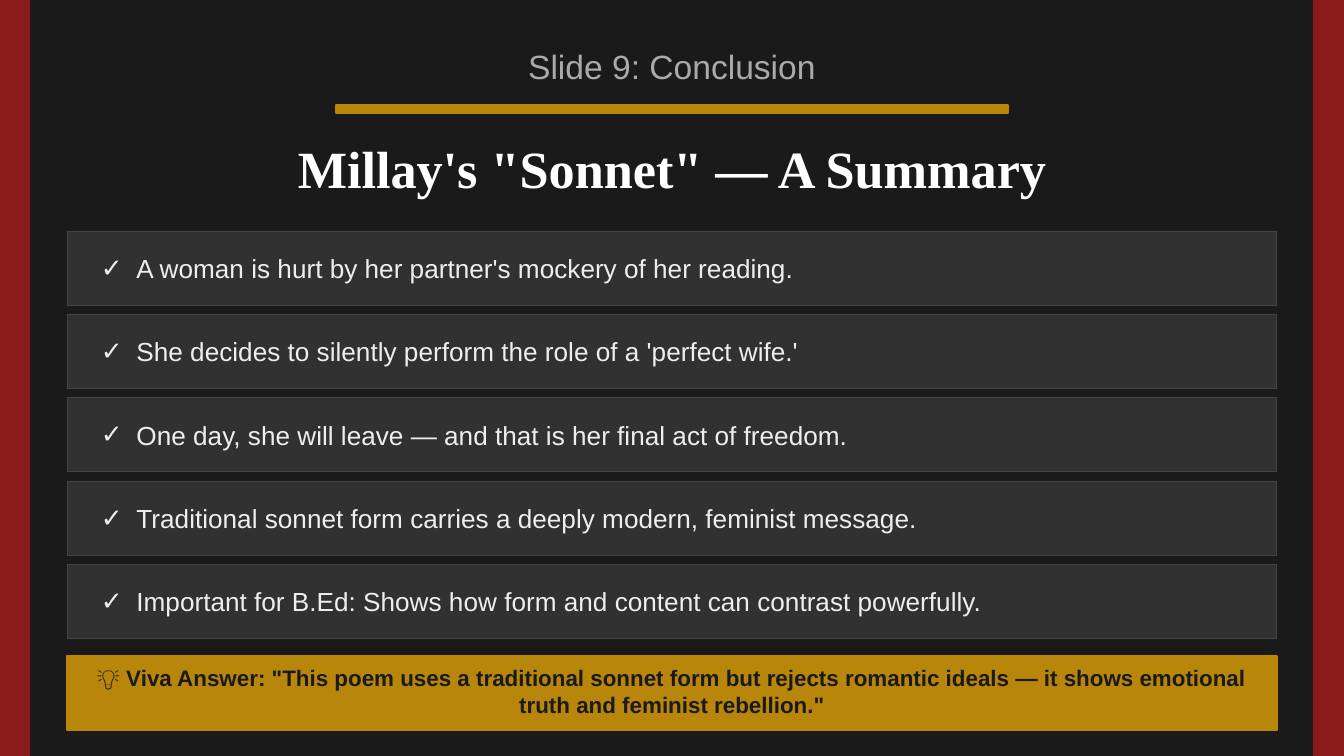
"""Build the concluding summary slide on Millay's sonnet."""
from lxml import etree
from pptx import Presentation
from pptx import util as u
from pptx.dml.color import RGBColor
from pptx.enum import shapes, text
from pptx.oxml.ns import qn

PX = 4572
WIDTH, HEIGHT = 2000, 1125
SIDE = 44
MARGIN, CONTENT = 100, 1800
ROW_TOP, ROW_HEIGHT, ROW_PITCH = 344, 110, 124
LINE_POINTS = 16
PX_POINTS = 0.36

COLORS = {
    "night": "1A1A1A",
    "red": "8B1A1A",
    "gold": "B7860B",
    "white": "FFFFFF",
    "edge": "444444",
    "label": "AAAAAA",
    "item": "EEEEEE",
}

FORMATS = {
    "label": {"name": "Arial", "size": u.Pt(18), "bold": False, "color": "label"},
    "title": {"name": "Times New Roman", "size": u.Pt(28), "bold": True, "color": "white"},
    "item": {"name": "Arial", "size": u.Pt(14), "bold": False, "color": "item"},
    "answer": {"name": "Arial", "size": u.Pt(12), "bold": True, "color": "night"},
}

POINTS = [
    "A woman is hurt by her partner's mockery of her reading.",
    "She decides to silently perform the role of a 'perfect wife.'",
    "One day, she will leave — and that is her final act of freedom.",
    "Traditional sonnet form carries a deeply modern, feminist message.",
    "Important for B.Ed: Shows how form and content can contrast powerfully.",
]
ANSWER = (
    '💡 Viva Answer: "This poem uses a traditional sonnet form but rejects '
    'romantic ideals — it shows emotional truth and feminist rebellion."'
)


def px(*lengths):
    """Turn pixel lengths into EMU."""
    return [u.Emu(length * PX) for length in lengths]


def rgb(name):
    """Look up a named colour."""
    return RGBColor.from_string(COLORS[name])


def add_bar(page, area, fill, line, points=1, opacity=100):
    """Add a flat rectangle with an outline."""
    bar = page.shapes.add_shape(shapes.MSO_SHAPE.RECTANGLE, *px(*area))
    bar.shadow.inherit = False
    bar.fill.solid()
    bar.fill.fore_color.rgb = rgb(fill)
    bar.line.color.rgb = rgb(line)
    bar.line.width = u.Pt(points)
    if opacity < 100:
        color = bar.fill._xPr.find(qn("a:solidFill"))[0]
        etree.SubElement(color, qn("a:alpha"), val=str(opacity * 1000))


def add_span(para, words, style):
    """Add a run of text in a named format."""
    span = para.add_run()
    span.text = words
    for key, value in FORMATS[style].items():
        if key == "color":
            span.font.color.rgb = rgb(value)
        else:
            setattr(span.font, key, value)


def set_frame(box, area):
    """Place a text holder and centre its text vertically."""
    box.left, box.top, box.width, box.height = px(*area)
    settings = {
        "word_wrap": True,
        "auto_size": text.MSO_AUTO_SIZE.NONE,
        "vertical_anchor": text.MSO_ANCHOR.MIDDLE,
    }
    for key, value in settings.items():
        setattr(box.text_frame, key, value)


def write_line(box, area, words, style):
    """Fill a text holder with one centred paragraph."""
    set_frame(box, area)
    para = box.text_frame.paragraphs[0]
    para.alignment = text.PP_ALIGN.CENTER
    add_span(para, words, style)


def add_text(page, area, words, style):
    """Add a text box with one centred paragraph."""
    write_line(page.shapes.add_textbox(*px(*area)), area, words, style)


def add_check(para):
    """Give a paragraph a hanging check mark."""
    indent = 53 * PX
    properties = para._p.get_or_add_pPr()
    properties.set("marL", str(indent))
    properties.set("indent", str(-indent))
    etree.SubElement(properties, qn("a:buChar"), char="✓")


def write_list(box, area, items):
    """Fill the body with checked items spaced to match the rows."""
    set_frame(box, area)
    gap = u.Pt(ROW_PITCH * PX_POINTS - LINE_POINTS)
    for index, words in enumerate(items):
        frame = box.text_frame
        para = frame.add_paragraph() if index else frame.paragraphs[0]
        add_check(para)
        para.line_spacing = u.Pt(LINE_POINTS)
        para.space_before = gap if index else u.Pt(0)
        add_span(para, words, "item")


def main():
    """Build and save the slide."""
    deck = Presentation()
    deck.slide_width, deck.slide_height = px(WIDTH, HEIGHT)
    page = deck.slides.add_slide(deck.slide_layouts[1])
    page.background.fill.solid()
    page.background.fill.fore_color.rgb = rgb("night")
    title, body = page.placeholders

    for left in (0, WIDTH - SIDE):
        add_bar(page, (left, 0, SIDE, HEIGHT), "red", "red")
    add_text(page, (MARGIN, 56, CONTENT, 84), "Slide 9: Conclusion", "label")
    add_bar(page, (500, 156, 1000, 12), "gold", "gold")
    write_line(title, (MARGIN, 190, CONTENT, 120), "Millay's \"Sonnet\" — A Summary", "title")

    for index in range(len(POINTS)):
        row = (MARGIN, ROW_TOP + index * ROW_PITCH, CONTENT, ROW_HEIGHT)
        add_bar(page, row, "white", "edge", 0.5, 10)
    list_height = (len(POINTS) - 1) * ROW_PITCH + ROW_HEIGHT
    write_list(body, (130, ROW_TOP + 1, 1740, list_height), POINTS)
    body._element.getparent().append(body._element)

    add_bar(page, (MARGIN, 976, CONTENT, 110), "gold", "gold")
    add_text(page, (120, 986, 1760, 84), ANSWER, "answer")
    deck.save("out.pptx")


if __name__ == "__main__":
    main()
